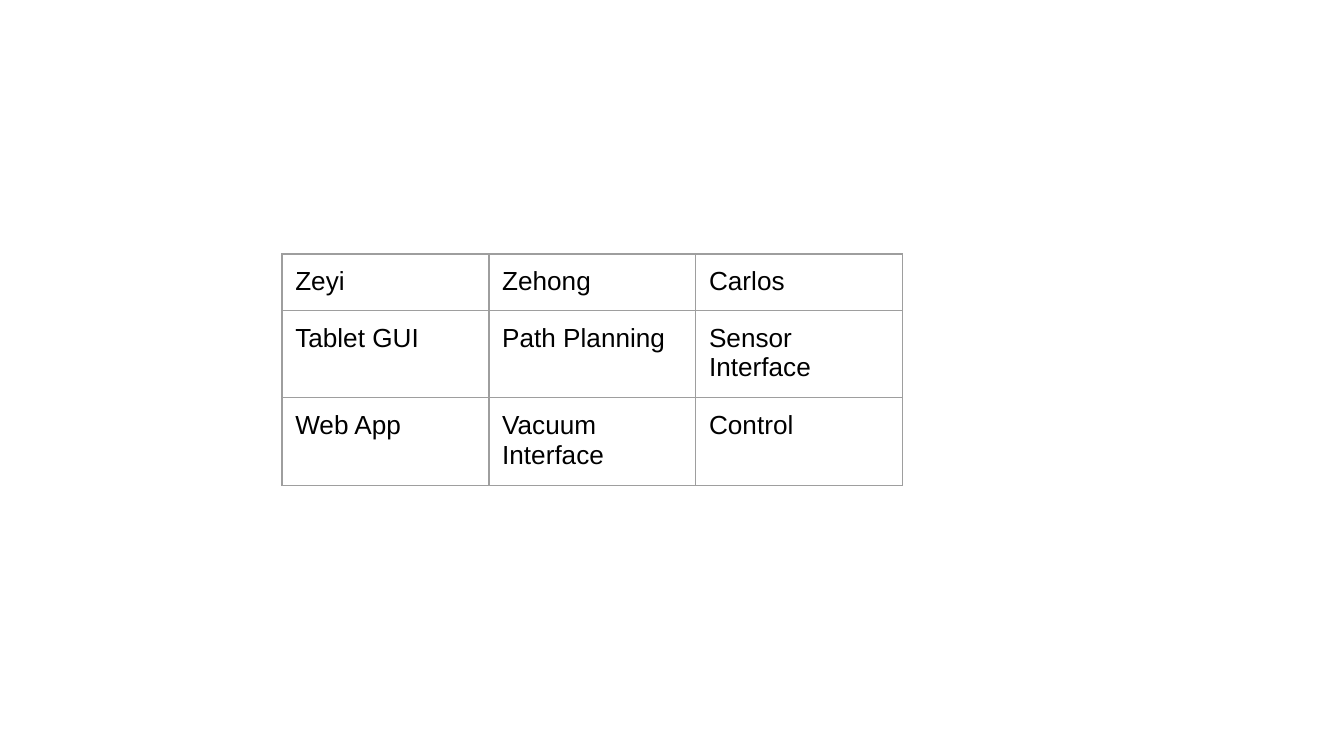
from lxml.etree import SubElement
from pptx import Presentation
from pptx.dml.color import RGBColor
from pptx.oxml.ns import qn
from pptx.util import Cm, Pt

ROWS = [
    ("Zeyi", "Zehong", "Carlos"),
    ("Tablet GUI", "Path Planning", "Sensor Interface"),
    ("Web App", "Vacuum Interface", "Control"),
]
ROW_HEIGHTS = [1.07, 1.65, 1.65]
COL_WIDTH = 3.91
LEFT, TOP = 5.33, 4.8
TEXT, BORDER, BACKGROUND = "000000", "9E9E9E", "FFFFFF"
FONT = {"name": "Arial", "size": Pt(14), "bold": False}
MARGINS = {f"margin_{side}": Cm(0.25) for side in ("left", "right", "top", "bottom")}


def color(value):
    return RGBColor.from_string(value)


def set_attrs(obj, values):
    for name, value in values.items():
        setattr(obj, name, value)


def add_borders(cell):
    tc_pr = cell._tc.get_or_add_tcPr()
    for i, side in enumerate(("lnL", "lnR", "lnT", "lnB")):
        ln = tc_pr.makeelement(qn(f"a:{side}"), {"w": str(Pt(0.75))})
        fill = SubElement(ln, qn("a:solidFill"))
        SubElement(fill, qn("a:srgbClr"), val=BORDER)
        tc_pr.insert(i, ln)


def fill_cell(cell, text):
    set_attrs(cell, MARGINS)
    cell.fill.background()
    add_borders(cell)
    p = cell.text_frame.paragraphs[0]
    r = p.add_run()
    r.text = text
    set_attrs(r.font, FONT)
    r.font.color.rgb = color(TEXT)


def main():
    prs = Presentation()
    set_attrs(prs, {"slide_width": Cm(25.4), "slide_height": Cm(14.29)})
    s = prs.slides.add_slide(prs.slide_layouts[6])
    s.background.fill.solid()
    s.background.fill.fore_color.rgb = color(BACKGROUND)

    n_cols = len(ROWS[0])
    table = s.shapes.add_table(
        len(ROWS), n_cols, Cm(LEFT), Cm(TOP),
        Cm(COL_WIDTH * n_cols), Cm(sum(ROW_HEIGHTS)),
    ).table
    set_attrs(table, {"first_row": False, "horz_banding": False})
    for col in table.columns:
        col.width = Cm(COL_WIDTH)
    for i, (height, texts) in enumerate(zip(ROW_HEIGHTS, ROWS)):
        table.rows[i].height = Cm(height)
        for j, text in enumerate(texts):
            fill_cell(table.cell(i, j), text)

    prs.save("out.pptx")


if __name__ == "__main__":
    main()
